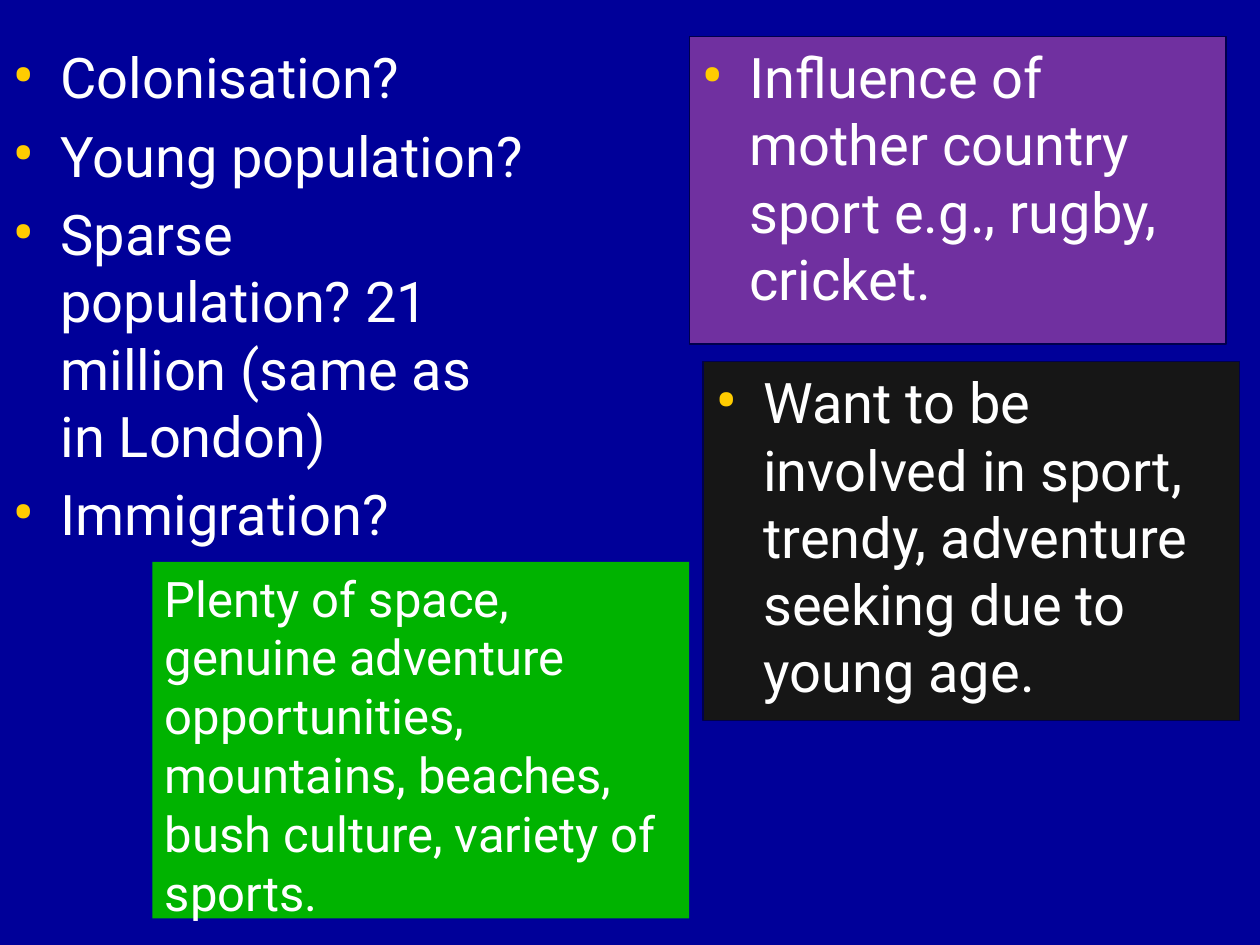
from lxml.etree import SubElement
from pptx import Presentation
from pptx.dml.color import RGBColor
from pptx.enum.shapes import MSO_SHAPE
from pptx.enum.text import MSO_ANCHOR, MSO_AUTO_SIZE, PP_ALIGN
from pptx.oxml.ns import qn
from pptx.util import Inches, Pt

COLOURS = {
    "background": "000099",
    "text": "FFFFFF",
    "bullet": "FFCC00",
    "border": "00004C",
    "influence": "7030A0",
    "motivation": "161616",
    "landscape": "00B300",
}
SLIDE_WIDTH, SLIDE_HEIGHT = Inches(10), Inches(7.5)
COLUMN = 4.26
TOP = 0.29
FACTORS = [
    "Colonisation?",
    "Young population?",
    "Sparse population? 21 million (same as in London)",
    "Immigration?",
]
INFLUENCE = "Influence of mother country sport e.g., rugby, cricket."
MOTIVATION = "Want to be involved in sport, trendy, adventure seeking due to young age."
LANDSCAPE = (
    "Plenty of space, genuine adventure opportunities, mountains, "
    "beaches, bush culture, variety of sports."
)


def colour(name):
    return RGBColor.from_string(COLOURS[name])


def share_box(left, top, height):
    return (
        int(SLIDE_WIDTH * left / 10),
        int(SLIDE_HEIGHT * top / 7.5),
        int(SLIDE_WIDTH * COLUMN / 10),
        int(SLIDE_HEIGHT * height / 7.5),
    )


def set_bullet(paragraph, bulleted):
    properties = paragraph._p.get_or_add_pPr()
    indent = Inches(0.38) if bulleted else 0
    properties.set("marL", str(indent))
    properties.set("indent", str(-indent))
    if not bulleted:
        SubElement(properties, qn("a:buNone"))
        return
    bullet_colour = SubElement(properties, qn("a:buClr"))
    SubElement(bullet_colour, qn("a:srgbClr"), val=COLOURS["bullet"])
    SubElement(properties, qn("a:buSzPct"), val="120000")
    SubElement(properties, qn("a:buFont"), typeface="Roboto")
    SubElement(properties, qn("a:buChar"), char="•")


def write_text(frame, lines, size=32, bulleted=True):
    frame.text = "\n".join(lines)
    frame.word_wrap = True
    frame.auto_size = MSO_AUTO_SIZE.NONE
    frame.vertical_anchor = MSO_ANCHOR.TOP
    for index, paragraph in enumerate(frame.paragraphs):
        set_bullet(paragraph, bulleted)
        paragraph.alignment = PP_ALIGN.LEFT
        paragraph.space_before = Pt(size * 0.2 if index else 0)
        for run in paragraph.runs:
            run.font.name = "Roboto"
            run.font.size = Pt(size)
            run.font.color.rgb = colour("text")


def place_factors(slide, box):
    factors = slide.placeholders[1]
    factors.left, factors.top, factors.width, factors.height = box
    write_text(factors.text_frame, FACTORS)


def place_panel(slide, box, fill, text, size=32, bulleted=True):
    panel = slide.shapes.add_shape(MSO_SHAPE.RECTANGLE, *box)
    panel.shadow.inherit = False
    panel.fill.solid()
    panel.fill.fore_color.rgb = colour(fill)
    if bulleted:
        panel.line.color.rgb = colour("border")
        panel.line.width = Pt(0.75)
    else:
        panel.line.fill.background()
    write_text(panel.text_frame, [text], size, bulleted)


def build_slide(presentation):
    slide = presentation.slides.add_slide(presentation.slide_layouts[1])
    slide.background.fill.solid()
    slide.background.fill.fore_color.rgb = colour("background")
    empty_title = slide.shapes.title.element
    empty_title.getparent().remove(empty_title)
    place_factors(slide, share_box(0, TOP, 4.5))
    place_panel(slide, share_box(5.47, TOP, 2.44), "influence", INFLUENCE)
    place_panel(slide, share_box(5.58, 2.87, 2.85), "motivation", MOTIVATION)
    place_panel(slide, share_box(1.21, 4.46, 2.83), "landscape", LANDSCAPE, 28, False)


def main():
    presentation = Presentation()
    presentation.slide_width = SLIDE_WIDTH
    presentation.slide_height = SLIDE_HEIGHT
    build_slide(presentation)
    presentation.save("out.pptx")


if __name__ == "__main__":
    main()
